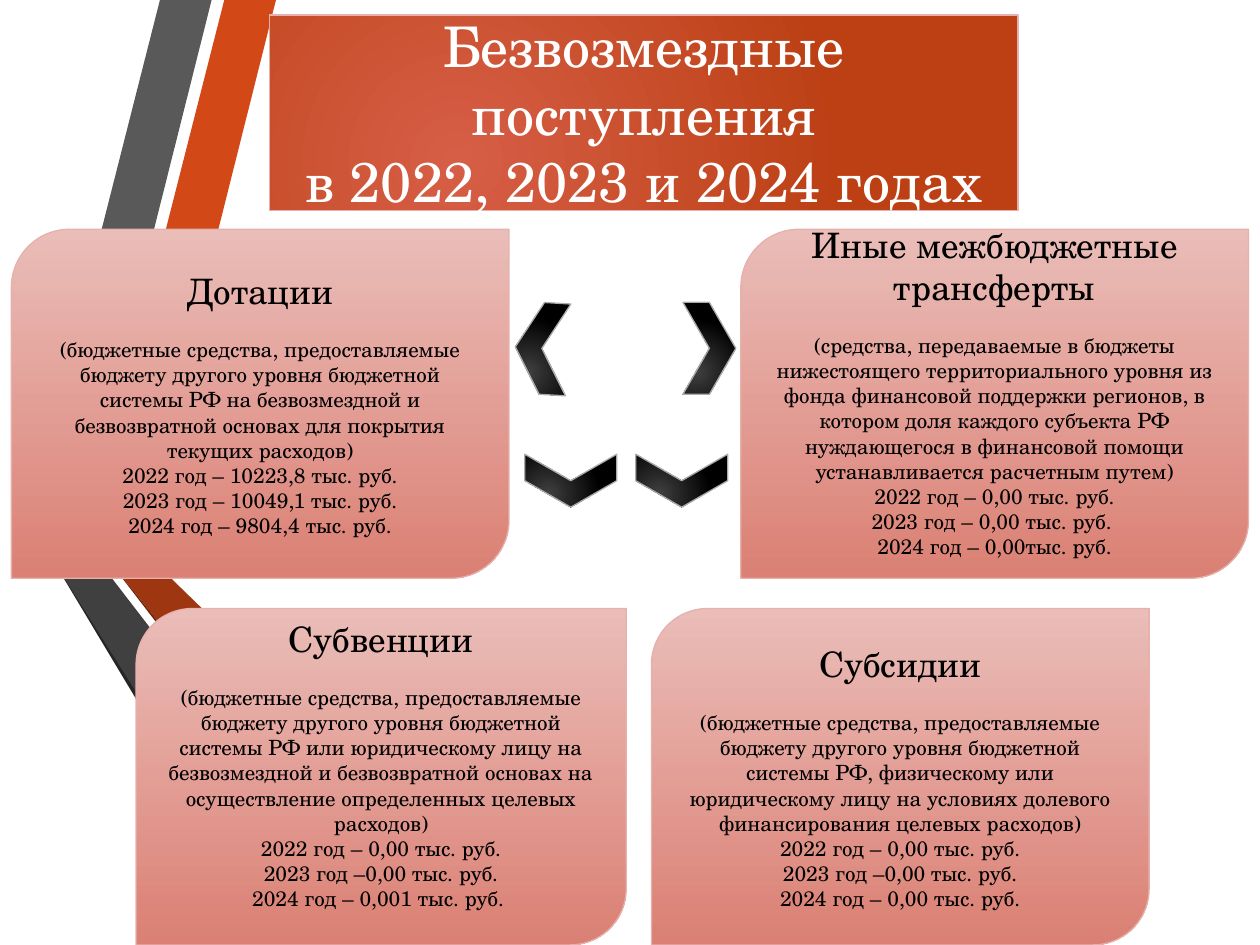
from lxml.etree import SubElement as Sub
from pptx import Presentation
from pptx.dml.color import RGBColor as Rgb
from pptx.enum.shapes import MSO_SHAPE as Kind
from pptx.enum.text import MSO_ANCHOR as Anchor, MSO_AUTO_SIZE as Auto, PP_ALIGN as Align
from pptx.oxml.ns import qn
from pptx.util import Inches, Pt

FONT = "TeX Gyre Schola"
CELL = Inches(0.1)
COLS, ROWS = 100, 75
HUE = {
    "white": "FFFFFF", "black": "000000", "gray": "595959", "slate": "404040",
    "coal": "262626", "red": "D34817", "rust": "9E3611", "wine": "69240C",
    "glow": "D65E46", "brick": "BC4014", "rose": "EABDB8", "coral": "DB8074",
    "rim": "E6B1AC", "steel": "ABABAB",
}


def hue(name):
    return Rgb.from_string(HUE[name])


def emu(*cells):
    return [round(n * CELL) for n in cells]


def blend(shape, first, last, rim, radial=False):
    fill = shape.fill
    fill.gradient()
    fill.gradient_angle = 270
    for stop, name in zip(fill.gradient_stops, (first, last)):
        stop.color.rgb = hue(name)
    if radial:
        grad = shape.element.spPr.find(qn("a:gradFill"))
        grad.remove(grad.find(qn("a:lin")))
        path = Sub(grad, qn("a:path"), path="circle")
        Sub(path, qn("a:fillToRect"), l="50000", t="100000", r="100000", b="50000")
    shape.line.color.rgb = hue(rim)
    shape.line.width = Pt(0.75)


def write(shape, lines, color):
    frame = shape.text_frame
    frame.word_wrap = True
    frame.auto_size = Auto.NONE
    frame.vertical_anchor = Anchor.MIDDLE
    for i, (text, size) in enumerate(lines):
        para = frame.paragraphs[0] if i == 0 else frame.add_paragraph()
        para.alignment = Align.CENTER
        run = para.add_run()
        run.text = text
        run.font.size = Pt(size)
        run.font.name = FONT
        run.font.color.rgb = hue(color)
    return frame


def add(slide, kind, box):
    shape = slide.shapes.add_shape(kind, *emu(*box))
    shape.shadow.inherit = False
    return shape


def bands(slide, box):
    left, top = box[:2]
    parts = [
        ("red", [(4.8, 42.4), (8.8, 43.4), (19.7, 0), (15.6, 0)]),
        ("gray", [(14.6, 0), (10.5, 0), (0, 41.3), (4, 42.2)]),
        ("coal", [(0.1, 41.3), (20.3, 75), (21.3, 75)]),
        ("wine", [(30.8, 75), (4.9, 42.5), (29.9, 75)]),
        ("rust", [(4.8, 42.4), (30.8, 75), (41.3, 75), (8.8, 43.4)]),
        ("slate", [(29.1, 75), (4.6, 43.2), (4, 42.2), (0, 41.3), (21.3, 75)]),
    ]
    for color, spots in parts:
        first, *rest = [emu(left + x, top + y) for x, y in spots]
        pen = slide.shapes.build_freeform(*first)
        pen.add_line_segments(rest, close=True)
        band = pen.convert_to_shape()
        band.shadow.inherit = False
        band.fill.solid()
        band.fill.fore_color.rgb = hue(color)
        band.line.fill.background()


def head(slide, box):
    title = slide.shapes.title
    title.left, title.top, title.width, title.height = emu(*box)
    Sub(Sub(title.element.spPr, qn("a:prstGeom"), prst="roundRect"), qn("a:avLst"))
    blend(title, "glow", "brick", "rim", radial=True)
    lines = ["Безвозмездные поступления", "в 2022, 2023 и 2024 годах"]
    write(title, [(text, 32) for text in lines], "white")
    title.element.getparent().append(title.element)


def card(slide, box, name, note, sums, foot=0):
    shape = add(slide, Kind.ROUND_2_DIAG_RECTANGLE, box)
    blend(shape, "rose", "coral", "rim")
    lines = [(name, 20)] + [(text, 12) for text in (note, *sums)]
    frame = write(shape, lines, "black")
    frame.paragraphs[0].space_after = Pt(14.4)
    frame.margin_bottom = Inches(0.05) + Pt(foot)


def arrows(slide, box):
    left, top = box[:2]
    marks = [(13.3, 0, 0), (11.1, 10.5, 90), (2.3, 10.5, 90), (0, 0, 183.4)]
    for x, y, turn in marks:
        mark = add(slide, Kind.CHEVRON, (left + x, top + y, 4.2, 7.3))
        mark.rotation = turn
        blend(mark, "slate", "black", "steel", radial=True)


CARDS = [
    ((0.9, 18.2, 39.5, 27.7), "Дотации",
     "(бюджетные средства, предоставляемые бюджету другого уровня бюджетной системы РФ "
     "на безвозмездной и безвозвратной основах для покрытия текущих расходов)",
     ["2022 год – 10223,8 тыс. руб.", "2023 год – 10049,1 тыс. руб.",
      "2024 год – 9804,4 тыс. руб."], 0),
    ((10.8, 48.3, 38.9, 26.7), "Субвенции",
     "(бюджетные средства, предоставляемые бюджету другого уровня бюджетной системы РФ "
     "или юридическому лицу на безвозмездной и безвозвратной основах "
     "на осуществление определенных целевых расходов)",
     ["2022 год – 0,00 тыс. руб.", "2023 год –0,00 тыс. руб.",
      "2024 год – 0,001 тыс. руб. "], 14.4),
    ((51.7, 48.3, 39.5, 26.7), "Субсидии",
     "(бюджетные средства, предоставляемые бюджету другого уровня бюджетной системы РФ, "
     "физическому или юридическому лицу на условиях долевого финансирования "
     "целевых расходов)",
     ["2022 год – 0,00 тыс. руб.", "2023 год –0,00 тыс. руб.",
      "2024 год – 0,00 тыс. руб."], 0),
    ((58.8, 18.2, 40.3, 27.7), "Иные межбюджетные трансферты",
     "(средства, передаваемые в бюджеты нижестоящего территориального уровня из фонда "
     "финансовой поддержки регионов, в котором доля каждого субъекта РФ нуждающегося "
     "в финансовой помощи устанавливается расчетным путем)",
     ["2022 год – 0,00 тыс. руб.", "2023 год – 0,00 тыс. руб. ",
      "2024 год – 0,00тыс. руб."], 14.4),
]


def main():
    deck = Presentation()
    deck.slide_width, deck.slide_height = emu(COLS, ROWS)
    slide = deck.slides.add_slide(deck.slide_layouts[5])
    bands(slide, (2.2, 0, 41.3, ROWS))
    head(slide, (21.4, 1.2, 59.4, 15.5))
    for item in CARDS:
        card(slide, *item)
    arrows(slide, (40.9, 24, 17.5, 17.8))
    deck.save("out.pptx")


if __name__ == "__main__":
    main()
